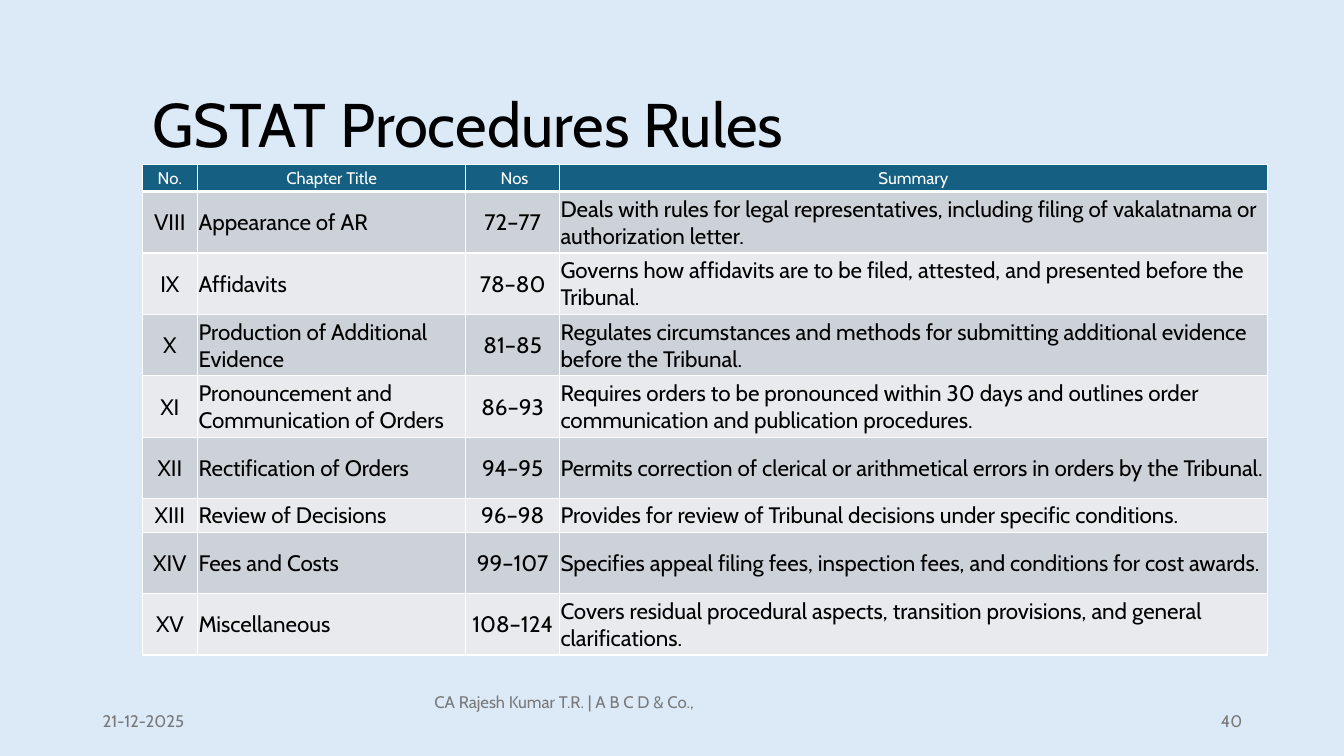
from lxml import etree
from pptx import Presentation
from pptx.dml.color import RGBColor
from pptx.enum import text
from pptx.oxml import ns
from pptx.util import Inches, Pt

FONT = "Cabin"
SKY = RGBColor(0xDC, 0xEA, 0xF7)
BLACK = RGBColor(0, 0, 0)
WHITE = RGBColor(0xFF, 0xFF, 0xFF)
GREY = RGBColor(0x79, 0x79, 0x79)
TEAL = RGBColor(0x15, 0x60, 0x82)
BANDS = [RGBColor(0xCC, 0xD2, 0xD8), RGBColor(0xE8, 0xEA, 0xED)]
LEFT, CENTER, RIGHT = text.PP_ALIGN.LEFT, text.PP_ALIGN.CENTER, text.PP_ALIGN.RIGHT
MIDDLE = text.MSO_ANCHOR.MIDDLE


def write(frame, words, size, color, align):
    frame.text = words
    para = frame.paragraphs[0]
    para.alignment = align
    font = para.runs[0].font
    font.name, font.size, font.color.rgb = FONT, Pt(size), color
    return para


def edge(cell, side, width):
    """Draw a white border on one side (L, R, T or B) of a cell."""
    line = etree.SubElement(cell._tc.get_or_add_tcPr(), ns.qn(f"a:ln{side}"), w=str(Pt(width)))
    fill = etree.SubElement(line, ns.qn("a:solidFill"))
    etree.SubElement(fill, ns.qn("a:srgbClr"), val=str(WHITE))


deck = Presentation()
deck.slide_width, deck.slide_height = Inches(13.33), Inches(7.5)
slide = deck.slides.add_slide(deck.slide_layouts[6])
slide.background.fill.solid()
slide.background.fill.fore_color.rgb = SKY

# Title and footer
labels = [
    ("GSTAT Procedures Rules", 1.41, 0.67, 11.15, 1.2, 44, BLACK, LEFT),
    ("21-12-2025", 0.92, 6.95, 3, 0.4, 12, GREY, LEFT),
    ("CA Rajesh Kumar T.R. | A B C D & Co., ", 2.17, 6.76, 6.89, 0.4, 12, GREY, CENTER),
    ("40", 9.42, 6.95, 3, 0.4, 12, GREY, RIGHT),
]
for words, x, y, w, h, size, color, align in labels:
    frame = slide.shapes.add_textbox(Inches(x), Inches(y), Inches(w), Inches(h)).text_frame
    frame.word_wrap = True
    frame.vertical_anchor = MIDDLE
    para = write(frame, words, size, color, align)
    if size == 44:
        para.line_spacing = 0.9
    elif align == CENTER:
        para.space_after = Pt(6)

# Table of chapters
rows = [
    ("No.", "Chapter Title", " Nos", "Summary"),
    ("VIII", "Appearance of AR", "72–77",
     "Deals with rules for legal representatives, including filing of vakalatnama or authorization letter."),
    ("IX", "Affidavits", "78–80",
     "Governs how affidavits are to be filed, attested, and presented before the Tribunal."),
    ("X", "Production of Additional Evidence", "81–85",
     "Regulates circumstances and methods for submitting additional evidence before the Tribunal."),
    ("XI", "Pronouncement and Communication of Orders", "86–93",
     "Requires orders to be pronounced within 30 days and outlines order communication and publication procedures."),
    ("XII", "Rectification of Orders", "94–95",
     "Permits correction of clerical or arithmetical errors in orders by the Tribunal."),
    ("XIII", "Review of Decisions", "96–98",
     "Provides for review of Tribunal decisions under specific conditions."),
    ("XIV", "Fees and Costs", "99–107",
     "Specifies appeal filing fees, inspection fees, and conditions for cost awards."),
    ("XV", "Miscellaneous", "108–124",
     "Covers residual procedural aspects, transition provisions, and general clarifications."),
]
widths = [0.55, 2.66, 0.93, 7.02]
heights = {0: 0.27, 6: 0.33}

table = slide.shapes.add_table(len(rows), len(widths), Inches(1.41), Inches(1.63),
                               Inches(11.15), Inches(4.88)).table
for col, width in zip(table.columns, widths):
    col.width = Inches(width)
for r, row in enumerate(rows):
    table.rows[r].height = Inches(heights.get(r, 0.61))
    head = r == 0
    for c, words in enumerate(row):
        cell = table.cell(r, c)
        cell.margin_left = cell.margin_right = cell.margin_top = Inches(0.01)
        cell.margin_bottom = 0
        cell.vertical_anchor = MIDDLE
        for side in "LRTB":
            edge(cell, side, 3 if (r, side) in [(0, "B"), (1, "T")] else 1)
        cell.fill.solid()
        cell.fill.fore_color.rgb = TEAL if head else BANDS[(r - 1) % 2]
        para = write(cell.text_frame, words, 12 if head else 16, WHITE if head else BLACK,
                     CENTER if head or c in (0, 2) else LEFT)
        para.runs[0].font.bold = False

deck.save("out.pptx")
